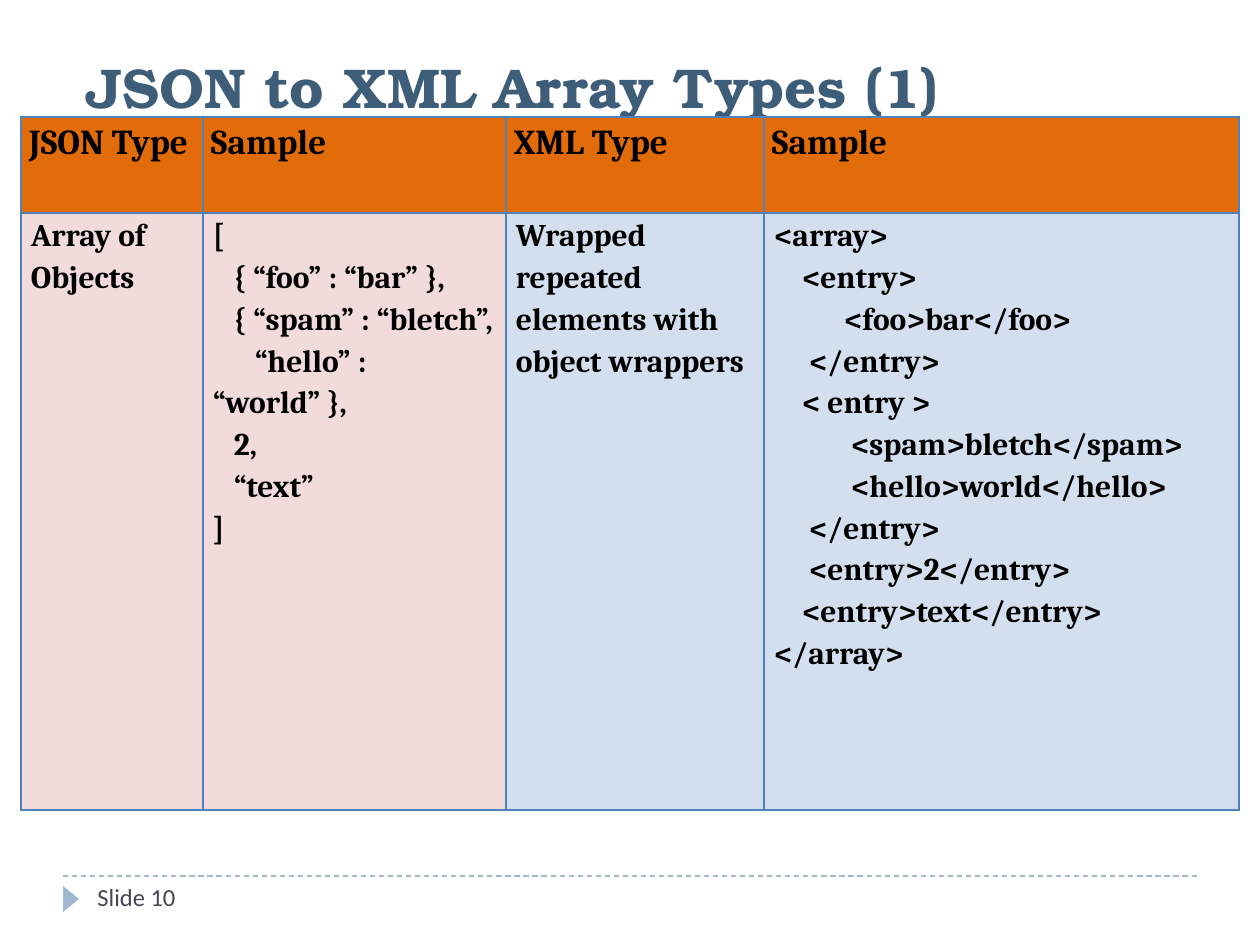
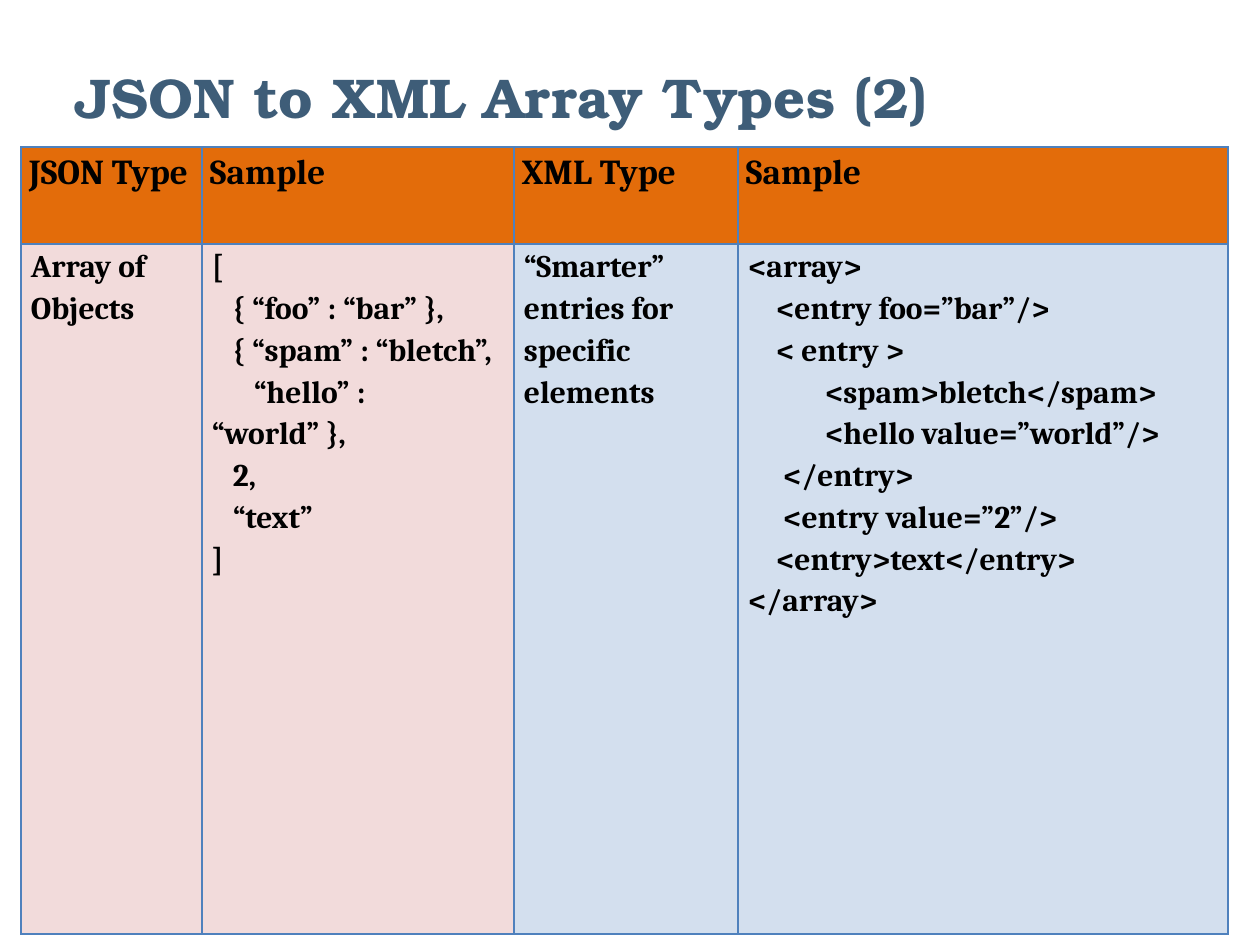
from lxml.etree import SubElement
from pptx import Presentation
from pptx.dml.color import RGBColor
from pptx.enum.dml import MSO_LINE
from pptx.enum.shapes import MSO_CONNECTOR, MSO_SHAPE
from pptx.enum.text import MSO_ANCHOR, MSO_AUTO_SIZE, PP_ALIGN
from pptx.oxml.ns import qn
from pptx.util import Emu, Pt

# Content: code lines are (indent in spaces, text)
HEADERS = ["JSON Type", "Sample", "XML Type", "Sample"]
JSON_TYPE = [(0, "Array of Objects")]
JSON_SAMPLE = [
    (0, "["),
    (3, "{ “foo” : “bar” },"),
    (3, "{ “spam” : “bletch”,"),
    (6, "“hello” : “world” },"),
    (3, "2,"),
    (3, "“text”"),
    (0, "]"),
]
SLIDES = [
    {
        "title": "JSON to XML Array Types (1)",
        "title_box": (74, 0, 1134, 126),
        "table_at": (21, 117),
        "cols": (182, 303, 258, 475),
        "rows": (96, 597),
        "xml_type": [(0, "Wrapped repeated elements with object wrappers")],
        "xml_sample": [
            (0, "<array>"),
            (4, "<entry>"),
            (10, "<foo>bar</foo>"),
            (5, "</entry>"),
            (4, "< entry >"),
            (11, "<spam>bletch</spam>"),
            (11, "<hello>world</hello>"),
            (5, "</entry>"),
            (5, "<entry>2</entry>"),
            (4, "<entry>text</entry>"),
            (0, "</array>"),
        ],
        "footer": "Slide 10",
    },
    {
        "title": "JSON to XML Array Types (2)",
        "title_box": (63, 21, 1134, 115),
        "table_at": (21, 147),
        "cols": (181, 312, 224, 490),
        "rows": (97, 690),
        "xml_type": [(0, "“Smarter” entries for specific elements")],
        "xml_sample": [
            (0, "<array>"),
            (4, "<entry foo=”bar”/>"),
            (4, "< entry >"),
            (11, "<spam>bletch</spam>"),
            (11, "<hello value=”world”/>"),
            (5, "</entry>"),
            (5, "<entry value=”2”/>"),
            (4, "<entry>text</entry>"),
            (0, "</array>"),
        ],
        "footer": None,
    },
]

# Shared style
TITLE, BODY, FOOT = "TeX Gyre Bonum", "Cambria", "Calibri"
INK, TITLE_INK, FOOT_INK = "000000", "3E5D78", "464653"
ORANGE, PINK, PALE_BLUE = "E36C0A", "F2DBDB", "D3DFEE"
BORDER, ACCENT = "4F81BD", "9FB8CD"
COLUMN_FILLS = [PINK, PINK, PALE_BLUE, PALE_BLUE]
RULES_Y = [876, 158]  # footer rule, title rule
SPACE = 7  # px per space of code indent


def px(n):
    return Emu(round(n * 914400 / 126))


def rgb(color):
    return RGBColor.from_string(color)


def write(tf, lines, size, font, color, bold=False, spacing=None):
    for i, (indent, text) in enumerate(lines):
        p = tf.paragraphs[0] if i == 0 else tf.add_paragraph()
        p.alignment = PP_ALIGN.LEFT
        if spacing:
            p.line_spacing = spacing
        if indent:
            pPr = p._p.get_or_add_pPr()
            pPr.set("marL", "0")
            pPr.set("indent", str(px(indent * SPACE)))
        r = p.add_run()
        r.text = text
        r.font.size, r.font.name, r.font.bold = Pt(size), font, bold
        r.font.color.rgb = rgb(color)


def format_cell(cell, lines, fill, size, margin):
    cell.margin_left = cell.margin_right = px(margin)
    cell.margin_top = cell.margin_bottom = 0
    tcPr = cell._tc.get_or_add_tcPr()
    for side in ("a:lnL", "a:lnR", "a:lnT", "a:lnB"):
        ln = SubElement(tcPr, qn(side), w=str(Pt(1)))
        SubElement(SubElement(ln, qn("a:solidFill")), qn("a:srgbClr"), val=BORDER)
    cell.fill.solid()
    cell.fill.fore_color.rgb = rgb(fill)
    write(cell.text_frame, lines, size, BODY, INK, bold=True, spacing=1.15)


def add_title(s, text, box):
    sp = s.shapes.title
    sp.left, sp.top, sp.width, sp.height = map(px, box)
    tf = sp.text_frame
    tf.auto_size = MSO_AUTO_SIZE.NONE
    tf.vertical_anchor = MSO_ANCHOR.BOTTOM
    write(tf, [(0, text)], 32, TITLE, TITLE_INK, bold=True)


def add_type_table(s, data):
    cols, rows = data["cols"], data["rows"]
    size = sum(cols), sum(rows)
    table = s.shapes.add_table(2, len(cols), *map(px, data["table_at"] + size)).table
    table.horz_banding = False
    for row, height in zip(table.rows, rows):
        row.height = px(height)
    body = [JSON_TYPE, JSON_SAMPLE, data["xml_type"], data["xml_sample"]]
    for c, width in enumerate(cols):
        table.columns[c].width = px(width)
        format_cell(table.cell(0, c), [(0, HEADERS[c])], ORANGE, 20, 8)
        format_cell(table.cell(1, c), body[c], COLUMN_FILLS[c], 18, 10)


def add_rules(s):
    for y in RULES_Y:
        line = s.shapes.add_connector(MSO_CONNECTOR.STRAIGHT, *map(px, (63, y, 1197, y)))
        line.line.color.rgb = rgb(ACCENT)
        line.line.width = Pt(0.75)
        line.line.dash_style = MSO_LINE.DASH
        SubElement(line._element.spPr, qn("a:effectLst"))
    marker = s.shapes.add_shape(MSO_SHAPE.ISOSCELES_TRIANGLE, *map(px, (58, 891, 26, 16)))
    marker.rotation = 90
    marker.shadow.inherit = False
    marker.fill.solid()
    marker.fill.fore_color.rgb = rgb(ACCENT)
    marker.line.fill.background()


def add_footer(s, text):
    tf = s.shapes.add_textbox(*map(px, (85, 876, 273, 50))).text_frame
    tf.word_wrap = True
    write(tf, [(0, text)], 14, FOOT, FOOT_INK)


def main():
    prs = Presentation()
    prs.slide_width, prs.slide_height = px(1260), px(945)
    for data in SLIDES:
        s = prs.slides.add_slide(prs.slide_layouts[5])
        add_rules(s)
        add_title(s, data["title"], data["title_box"])
        if data["footer"]:
            add_footer(s, data["footer"])
        add_type_table(s, data)
    prs.save("out.pptx")


if __name__ == "__main__":
    main()
